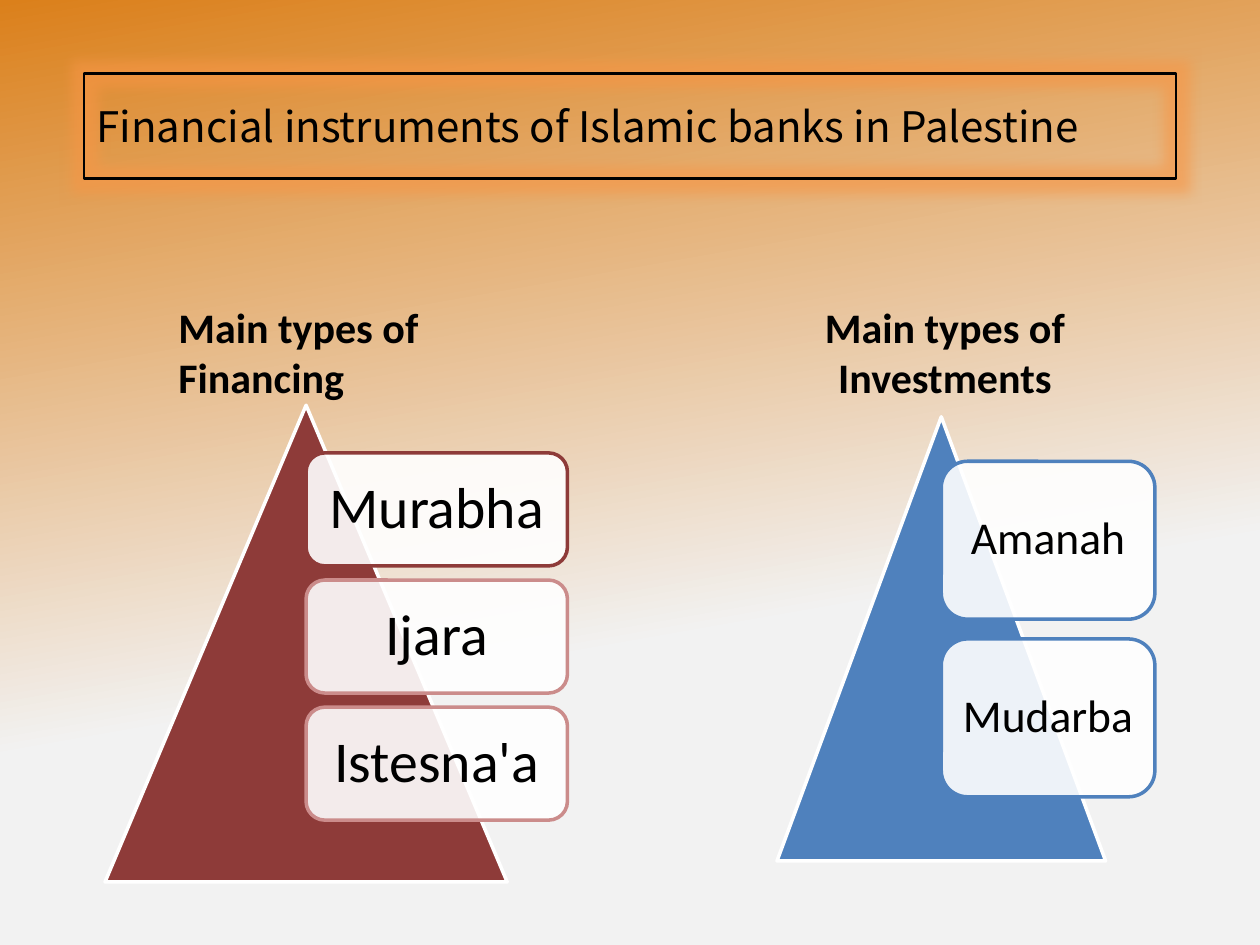
"""Build the slide on financing and investment types of Islamic banks."""
from dataclasses import dataclass

from lxml import etree
from pptx import Presentation
from pptx.dml.color import RGBColor
from pptx.enum.shapes import MSO_SHAPE
from pptx.enum.text import MSO_ANCHOR, MSO_AUTO_SIZE, PP_ALIGN
from pptx.oxml.ns import qn
from pptx.util import Inches, Pt

CONE = MSO_SHAPE.ISOSCELES_TRIANGLE
CARD = MSO_SHAPE.ROUNDED_RECTANGLE
MIDDLE = MSO_ANCHOR.MIDDLE
FIXED = MSO_AUTO_SIZE.NONE
LEFT, CENTER = PP_ALIGN.LEFT, PP_ALIGN.CENTER

BLACK = RGBColor(0x00, 0x00, 0x00)
WHITE = RGBColor(0xFF, 0xFF, 0xFF)
AMBER = RGBColor(0xDB, 0x80, 0x1B)
MIST = RGBColor(0xF2, 0xF2, 0xF2)
GLOW = RGBColor(0xF7, 0x96, 0x46)
RED = RGBColor(0x8E, 0x3B, 0x39)
ROSE = RGBColor(0xCB, 0x8C, 0x8B)
BLUE = RGBColor(0x4F, 0x81, 0xBD)

WIDE, HIGH = Inches(10), Inches(7.5)
COLS, ROWS = 120, 90


@dataclass(frozen=True)
class Box:
    """Place on the slide, in columns and rows of the grid."""
    left: float
    top: float
    width: float
    height: float

    def place(self) -> tuple[int, int, int, int]:
        """Return the place in slide units."""
        col, row = WIDE / COLS, HIGH / ROWS
        return (round(self.left * col), round(self.top * row),
                round(self.width * col), round(self.height * row))


@dataclass(frozen=True)
class Item:
    """Card in a pyramid."""
    text: str
    edge: RGBColor


@dataclass(frozen=True)
class Group:
    """Heading with the pyramid and cards below it."""
    head: str
    label: Box
    align: PP_ALIGN
    pad: float
    cone: Box
    fill: RGBColor
    size: int
    items: tuple[Item, ...]


TITLE = "Financial instruments of Islamic banks in Palestine"
GROUPS = (
    Group("Main types of Financing", Box(11, 29, 36, 9), LEFT, 0.5,
          Box(10, 38.6, 38.3, 45.4), RED, 33,
          (Item("Murabha", RED), Item("Ijara", ROSE), Item("Istesna'a", ROSE))),
    Group("Main types of Investments", Box(72, 29, 36, 9), CENTER, 0.1,
          Box(74, 39.7, 31.3, 42.3), BLUE, 26,
          (Item("Amanah", BLUE), Item("Mudarba", BLUE))),
)


def write(shape, text: str, size: int, font: str, bold: bool, align: PP_ALIGN) -> None:
    """Put one formatted paragraph in a shape."""
    frame = shape.text_frame
    frame.text = text
    frame.auto_size = FIXED
    frame.word_wrap = True
    frame.vertical_anchor = MIDDLE
    para = frame.paragraphs[0]
    para.alignment = align
    face = para.runs[0].font
    face.name, face.size, face.bold = font, Pt(size), bold
    face.color.rgb = BLACK


def fade(parent, share: int) -> None:
    """Make the colour inside an element partly opaque."""
    tone = parent.find(".//" + qn("a:srgbClr"))
    etree.SubElement(tone, qn("a:alpha"), val=str(share * 1000))


def draw(slide, kind: MSO_SHAPE, box: Box, fill: RGBColor, edge: RGBColor):
    """Add a filled and outlined shape."""
    shape = slide.shapes.add_shape(kind, *box.place())
    shape.shadow.inherit = False
    shape.fill.solid()
    shape.fill.fore_color.rgb = fill
    shape.line.color.rgb = edge
    shape.line.width = Pt(2)
    return shape


def paint(slide) -> None:
    """Fill the background with a slanted gradient."""
    fill = slide.background.fill
    fill.gradient()
    fill.gradient_angle = 280
    for stop, tone, spot in zip(fill.gradient_stops, (AMBER, MIST), (0, 0.65)):
        stop.color.rgb = tone
        stop.position = spot


def banner(slide) -> None:
    """Format the title as a glowing frame."""
    shape = slide.shapes.title
    shape.left, shape.top, shape.width, shape.height = Box(8, 7, 104, 10).place()
    write(shape, TITLE, 24, "Noto Sans CJK SC", False, LEFT)
    shape.line.color.rgb = BLACK
    shape.line.width = Pt(1.5)
    effect = etree.SubElement(shape._element.spPr, qn("a:effectLst"))
    glow = etree.SubElement(effect, qn("a:glow"), rad=str(Pt(14)))
    etree.SubElement(glow, qn("a:srgbClr"), val=str(GLOW))
    fade(glow, 60)


def stack(slide, group: Group) -> None:
    """Draw a heading, its pyramid and an even stack of cards."""
    label = slide.shapes.add_textbox(*group.label.place())
    write(label, group.head, 24, "Calibri", True, group.align)
    label.text_frame.margin_left = Inches(group.pad)
    cone = group.cone
    draw(slide, CONE, cone, group.fill, WHITE)
    step = 0.8 * cone.height / len(group.items)
    for row, item in enumerate(group.items):
        box = Box(cone.left + cone.width / 2, cone.top + cone.height / 10 + row * step,
                  cone.width * 0.65, step * 8 / 9)
        card = draw(slide, CARD, box, WHITE, item.edge)
        fade(card._element.spPr.find(qn("a:solidFill")), 90)
        write(card, item.text, group.size, "Calibri", False, CENTER)
        card.text_frame.margin_left = card.text_frame.margin_right = 0
        card.text_frame.paragraphs[0].line_spacing = 0.9


def main() -> None:
    """Build and save the slide."""
    deck = Presentation()
    deck.slide_width, deck.slide_height = WIDE, HIGH
    slide = deck.slides.add_slide(deck.slide_layouts[5])
    paint(slide)
    banner(slide)
    for group in GROUPS:
        stack(slide, group)
    deck.save("out.pptx")


if __name__ == "__main__":
    main()
